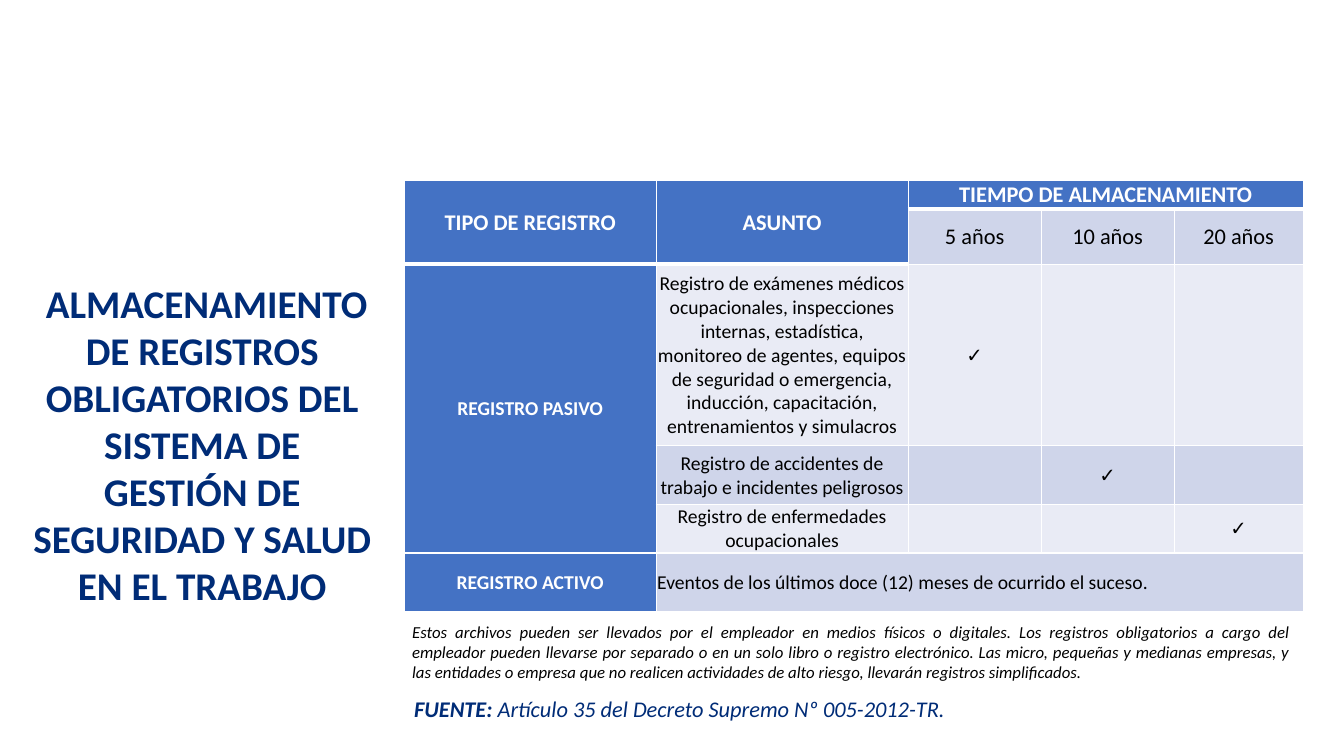
from dataclasses import dataclass
from itertools import product

from lxml.etree import SubElement
from pptx import Presentation
from pptx.dml.color import RGBColor
from pptx.enum.text import MSO_ANCHOR, PP_ALIGN
from pptx.oxml.ns import qn
from pptx.slide import Slide
from pptx.table import Table, _Cell
from pptx.text.text import Font
from pptx.util import Emu, Inches, Pt

SLIDE_WIDTH, SLIDE_HEIGHT = Inches(13.333), Inches(7.5)
GRID_COLUMNS, GRID_ROWS = 40, 30


@dataclass(frozen=True)
class Theme:
    font: str = "Calibri"
    navy: str = "002C77"
    accent: str = "4472C4"
    dark_band: str = "CFD5EA"
    light_band: str = "E9EBF5"
    white: str = "FFFFFF"
    black: str = "000000"
    title_size: int = 28
    heading_size: int = 16
    body_size: int = 14
    note_size: int = 12
    rule: int = 1
    heading_rule: int = 3


THEME = Theme()


@dataclass(frozen=True)
class Area:
    column: float
    row: float
    columns: float
    rows: float

    def box(self) -> tuple[Emu, Emu, Emu, Emu]:
        return across(self.column), down(self.row), across(self.columns), down(self.rows)


@dataclass(frozen=True)
class Piece:
    text: str
    bold: bool = False


@dataclass(frozen=True)
class Passage:
    area: Area
    pieces: tuple[Piece, ...]
    size: int
    color: str
    italic: bool
    align: PP_ALIGN


@dataclass(frozen=True)
class Entry:
    row: int
    column: int
    text: str
    rows: int = 1
    columns: int = 1
    align: PP_ALIGN = PP_ALIGN.CENTER


REGISTER_AREA = Area(12.03, 7.16, 26.76, 17)
REGISTER_COLUMNS = (7.5, 7.5, 3.96, 3.96, 3.84)
REGISTER_ROWS = (1.04, 2.2, 7.2, 2.32, 1.84, 2.32)

ENTRIES = (
    Entry(0, 0, "TIPO DE REGISTRO", rows=2),
    Entry(0, 1, "ASUNTO", rows=2),
    Entry(0, 2, "TIEMPO DE ALMACENAMIENTO", columns=3),
    Entry(1, 2, "5 años"),
    Entry(1, 3, "10 años"),
    Entry(1, 4, "20 años"),
    Entry(2, 0, "REGISTRO PASIVO", rows=3),
    Entry(2, 1, "Registro de exámenes médicos ocupacionales, inspecciones internas, "
                "estadística, monitoreo de agentes, equipos de seguridad o emergencia, "
                "inducción, capacitación, entrenamientos y simulacros"),
    Entry(2, 2, "✓"),
    Entry(3, 1, "Registro de accidentes de trabajo e incidentes peligrosos"),
    Entry(3, 3, "✓"),
    Entry(4, 1, "Registro de enfermedades ocupacionales"),
    Entry(4, 4, "✓"),
    Entry(5, 0, "REGISTRO ACTIVO"),
    Entry(5, 1, "Eventos de los últimos doce (12) meses de ocurrido el suceso.",
          columns=4, align=PP_ALIGN.LEFT),
)

PASSAGES = (
    Passage(
        Area(11.97, 24.48, 26.73, 3.64),
        (Piece("Estos archivos pueden ser llevados por el empleador en medios físicos o "
               "digitales. Los registros obligatorios a cargo del empleador pueden llevarse "
               "por separado o en un solo libro o registro electrónico. Las micro, pequeñas "
               "y medianas empresas, y las entidades o empresa que no realicen actividades "
               "de alto riesgo, llevarán registros simplificados."),),
        THEME.note_size, THEME.black, True, PP_ALIGN.JUSTIFY),
    Passage(
        Area(12.03, 27.4, 25.35, 1.48),
        (Piece("FUENTE: ", bold=True),
         Piece("Artículo 35 del Decreto Supremo Nº 005-2012-TR.")),
        THEME.heading_size, THEME.navy, True, PP_ALIGN.LEFT),
    Passage(
        Area(0.69, 10.88, 10.65, 13.6),
        (Piece(" ALMACENAMIENTO DE REGISTROS OBLIGATORIOS DEL SISTEMA DE GESTIÓN DE "
               "SEGURIDAD Y SALUD EN EL TRABAJO", bold=True),),
        THEME.title_size, THEME.navy, False, PP_ALIGN.CENTER),
)


def across(columns: float) -> Emu:
    return Emu(round(SLIDE_WIDTH * columns / GRID_COLUMNS))


def down(rows: float) -> Emu:
    return Emu(round(SLIDE_HEIGHT * rows / GRID_ROWS))


def style_font(font: Font, size: int, color: str) -> None:
    font.name = THEME.font
    font.size = Pt(size)
    font.color.rgb = RGBColor.from_string(color)


def draw_borders(cell: _Cell, bottom: int) -> None:
    properties = cell._tc.get_or_add_tcPr()
    widths = {"L": THEME.rule, "R": THEME.rule, "T": THEME.rule, "B": bottom}
    for side, width in widths.items():
        line = SubElement(properties, qn(f"a:ln{side}"), w=str(Pt(width)))
        SubElement(SubElement(line, qn("a:solidFill")), qn("a:srgbClr"), val=THEME.white)


def style_cell(cell: _Cell, row: int, column: int) -> None:
    heading = row == 0 or column == 0
    under_heading = row == 0 or (row == 1 and column < 2)
    draw_borders(cell, THEME.heading_rule if under_heading else THEME.rule)
    band = THEME.dark_band if row % 2 else THEME.light_band
    cell.fill.solid()
    cell.fill.fore_color.rgb = RGBColor.from_string(THEME.accent if heading else band)
    cell.margin_left = cell.margin_right = cell.margin_top = Inches(0.01)
    cell.margin_bottom = 0
    cell.vertical_anchor = MSO_ANCHOR.MIDDLE
    font = cell.text_frame.paragraphs[0].font
    style_font(font, THEME.heading_size if row < 2 else THEME.body_size,
               THEME.white if heading else THEME.black)
    font.bold = heading


def fill_entry(register: Table, entry: Entry) -> None:
    cell = register.cell(entry.row, entry.column)
    if entry.rows > 1 or entry.columns > 1:
        cell.merge(register.cell(entry.row + entry.rows - 1,
                                 entry.column + entry.columns - 1))
    paragraph = cell.text_frame.paragraphs[0]
    paragraph.add_run().text = entry.text
    paragraph.alignment = entry.align


def draw_register(slide: Slide) -> None:
    register = slide.shapes.add_table(
        len(REGISTER_ROWS), len(REGISTER_COLUMNS), *REGISTER_AREA.box()).table
    for column, width in zip(register.columns, REGISTER_COLUMNS):
        column.width = across(width)
    for row, height in zip(register.rows, REGISTER_ROWS):
        row.height = down(height)
    for row, column in product(range(len(REGISTER_ROWS)), range(len(REGISTER_COLUMNS))):
        style_cell(register.cell(row, column), row, column)
    for entry in ENTRIES:
        fill_entry(register, entry)


def draw_passage(slide: Slide, passage: Passage) -> None:
    frame = slide.shapes.add_textbox(*passage.area.box()).text_frame
    frame.word_wrap = True
    paragraph = frame.paragraphs[0]
    paragraph.alignment = passage.align
    style_font(paragraph.font, passage.size, passage.color)
    paragraph.font.italic = passage.italic
    for piece in passage.pieces:
        run = paragraph.add_run()
        run.text = piece.text
        run.font.bold = piece.bold


def main() -> None:
    presentation = Presentation()
    presentation.slide_width, presentation.slide_height = SLIDE_WIDTH, SLIDE_HEIGHT
    slide = presentation.slides.add_slide(presentation.slide_layouts[6])
    draw_register(slide)
    for passage in PASSAGES:
        draw_passage(slide, passage)
    presentation.save("out.pptx")


if __name__ == "__main__":
    main()
